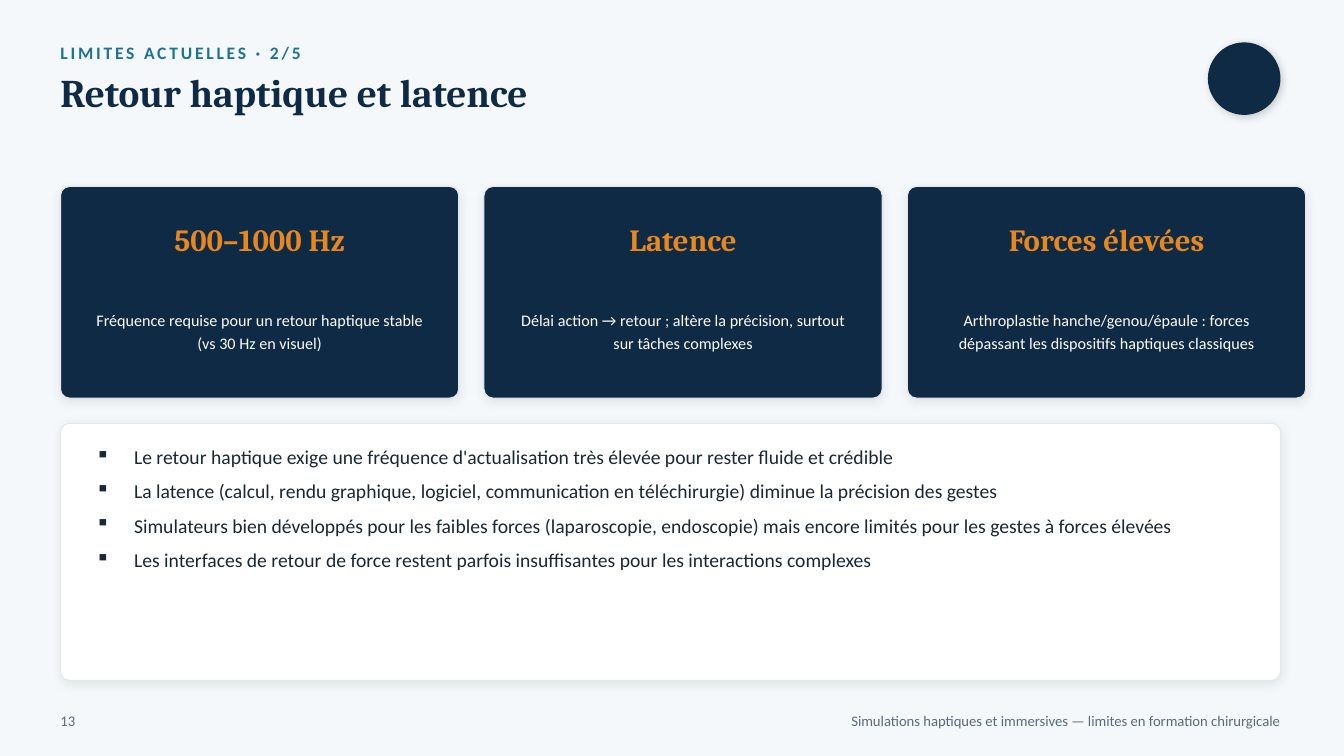
"""Build the slide on haptic feedback and latency."""
import lxml.etree
import pptx
import pptx.dml.color
import pptx.enum.shapes
import pptx.enum.text
import pptx.oxml.ns
import pptx.util

HUES = {
    "back": "F5F8FA", "navy": "0F2A44", "teal": "1C7293", "gold": "E8871E",
    "white": "FFFFFF", "edge": "E2E8EC", "ink": "1B2733", "grey": "5B6B79",
    "black": "000000",
}
KINDS = pptx.enum.shapes.MSO_SHAPE
ALIGN = pptx.enum.text.PP_ALIGN
ANCHOR = pptx.enum.text.MSO_ANCHOR

KICKER = {"name": "Calibri", "size": 12.5, "bold": True, "color": "teal"}
TITLE = {"name": "Cambria", "size": 28, "bold": True, "color": "navy"}
HEAD = {"name": "Cambria", "size": 22, "bold": True, "color": "gold"}
NOTE = {"name": "Calibri", "size": 11.5, "bold": False, "color": "white"}
BODY = {"name": "Calibri", "size": 14, "bold": False, "color": "ink"}
FOOT = {"name": "Calibri", "size": 10.5, "bold": False, "color": "grey"}

CARDS = [
    ("500–1000 Hz",
     "Fréquence requise pour un retour haptique stable (vs 30 Hz en visuel)"),
    ("Latence",
     "Délai action → retour ; altère la précision, surtout sur tâches complexes"),
    ("Forces élevées",
     "Arthroplastie hanche/genou/épaule : forces dépassant les dispositifs "
     "haptiques classiques"),
]
POINTS = [
    "Le retour haptique exige une fréquence d'actualisation très élevée pour "
    "rester fluide et crédible",
    "La latence (calcul, rendu graphique, logiciel, communication en "
    "téléchirurgie) diminue la précision des gestes",
    "Simulateurs bien développés pour les faibles forces (laparoscopie, "
    "endoscopie) mais encore limités pour les gestes à forces élevées",
    "Les interfaces de retour de force restent parfois insuffisantes pour les "
    "interactions complexes",
]


def px(count):
    """Turn px, 100 to the inch, into EMU."""
    return pptx.util.Emu(count * 9144)


def hue(name):
    """Look up a colour by name."""
    return pptx.dml.color.RGBColor.from_string(HUES[name])


def apply(target, values):
    """Set each value as an attribute of the target."""
    for key, value in values.items():
        setattr(target, key, value)


def add_tag(parent, tag, **values):
    """Append a drawing element and return it."""
    node = lxml.etree.SubElement(parent, pptx.oxml.ns.qn("a:" + tag))
    for key, value in values.items():
        node.set(key, str(value))
    return node


def write(frame, lines, style, anchor=ANCHOR.MIDDLE, track=0, bullet="", **form):
    """Fill a text frame with styled paragraphs."""
    apply(frame, {"word_wrap": True, "vertical_anchor": anchor,
                  "auto_size": pptx.enum.text.MSO_AUTO_SIZE.NONE,
                  "margin_left": 0, "margin_top": 0,
                  "margin_right": 0, "margin_bottom": 0})
    for index, line in enumerate(lines):
        para = frame.paragraphs[0] if index == 0 else frame.add_paragraph()
        if bullet:
            props = para._p.get_or_add_pPr()
            props.set("marL", str(px(38)))
            props.set("indent", str(px(-38)))
            add_tag(props, "buChar", char=bullet)
        apply(para, {"alignment": ALIGN.LEFT, **form})
        run = para.add_run()
        run.text = line
        apply(run.font, {"name": style["name"], "bold": style["bold"],
                         "size": pptx.util.Pt(style["size"])})
        run.font.color.rgb = hue(style["color"])
        if track:
            run._r.get_or_add_rPr().set("spc", str(track * 100))


def add_text(slide, box, lines, style, **form):
    """Place a text box."""
    shape = slide.shapes.add_textbox(*map(px, box))
    write(shape.text_frame, lines, style, **form)


def add_panel(slide, kind, box, fill, shade, edge=None, curve=None):
    """Place a filled shape with a soft shadow."""
    shape = slide.shapes.add_shape(kind, *map(px, box))
    shape.fill.solid()
    shape.fill.fore_color.rgb = hue(fill)
    if edge:
        shape.line.color.rgb = hue(edge)
        shape.line.width = pptx.util.Pt(0.75)
    else:
        shape.line.fill.background()
    if curve:
        shape.adjustments[0] = curve
    shape.shadow.inherit = False
    alpha, blur, angle = shade
    effects = shape._element.spPr.find(pptx.oxml.ns.qn("a:effectLst"))
    cast = add_tag(effects, "outerShdw", blurRad=pptx.util.Pt(blur),
                   dist=pptx.util.Pt(2), dir=angle * 60000,
                   algn="ctr", rotWithShape=0)
    tint = add_tag(cast, "srgbClr", val=HUES["black"])
    add_tag(tint, "alpha", val=alpha * 1000)


def add_header(slide, box):
    """Place the kicker, the title and the round badge."""
    left, top, width, height = box
    add_text(slide, (left, top, 800, 35), ["LIMITES ACTUELLES · 2/5"],
             KICKER, track=2)
    title = slide.shapes.title
    apply(title, dict(zip(("left", "top", "width", "height"),
                          map(px, (left, top + 33, 1060, height - 33)))))
    write(title.text_frame, ["Retour haptique et latence"], TITLE,
          anchor=ANCHOR.TOP)
    side = 72
    add_panel(slide, KINDS.OVAL, (left + width - side, top + 7, side, side),
              "navy", (18, 6, 45))


def add_card(slide, box, head, note):
    """Place one dark card with its heading and note."""
    left, top, width, height = box
    add_panel(slide, KINDS.ROUNDED_RECTANGLE, box, "navy", (8, 8, 90),
              "edge", 0.043)
    add_text(slide, (left + 20, top + 15, width - 40, 75), [head], HEAD,
             alignment=ALIGN.CENTER)
    add_text(slide, (left + 25, top + 90, width - 50, height - 105), [note],
             NOTE, alignment=ALIGN.CENTER, line_spacing=1.15)


def add_cards(slide, box, gap=25):
    """Share a row equally among the cards."""
    left, top, width, height = box
    count = len(CARDS)
    span = (width - gap * (count - 1)) // count
    for index, (head, note) in enumerate(CARDS):
        place = (left + index * (span + gap), top, span, height)
        add_card(slide, place, head, note)


def add_points(slide, box):
    """Place the white panel with its bullets."""
    left, top, width, height = box
    add_panel(slide, KINDS.ROUNDED_RECTANGLE, box, "white", (8, 8, 90),
              "edge", 0.035)
    add_text(slide, (left + 35, top + 20, width - 70, height - 35), POINTS,
             BODY, anchor=ANCHOR.TOP, bullet="▪", line_spacing=1.05,
             space_after=pptx.util.Pt(7))


def add_footer(slide, box):
    """Place the page number and the running title."""
    left, top, width, height = box
    add_text(slide, (left, top, 150, height), ["13"], FOOT)
    add_text(slide, (left + 240, top, width - 240, height),
             ["Simulations haptiques et immersives — limites en formation "
              "chirurgicale"], FOOT, alignment=ALIGN.RIGHT)


def main():
    """Build and save the deck."""
    deck = pptx.Presentation()
    apply(deck, {"slide_width": px(1333), "slide_height": px(750)})
    slide = deck.slides.add_slide(deck.slide_layouts[5])
    slide.background.fill.solid()
    slide.background.fill.fore_color.rgb = hue("back")
    add_header(slide, (60, 35, 1210, 118))
    add_cards(slide, (60, 185, 1235, 210))
    add_points(slide, (60, 420, 1210, 255))
    add_footer(slide, (60, 700, 1210, 30))
    deck.save("out.pptx")


if __name__ == "__main__":
    main()
